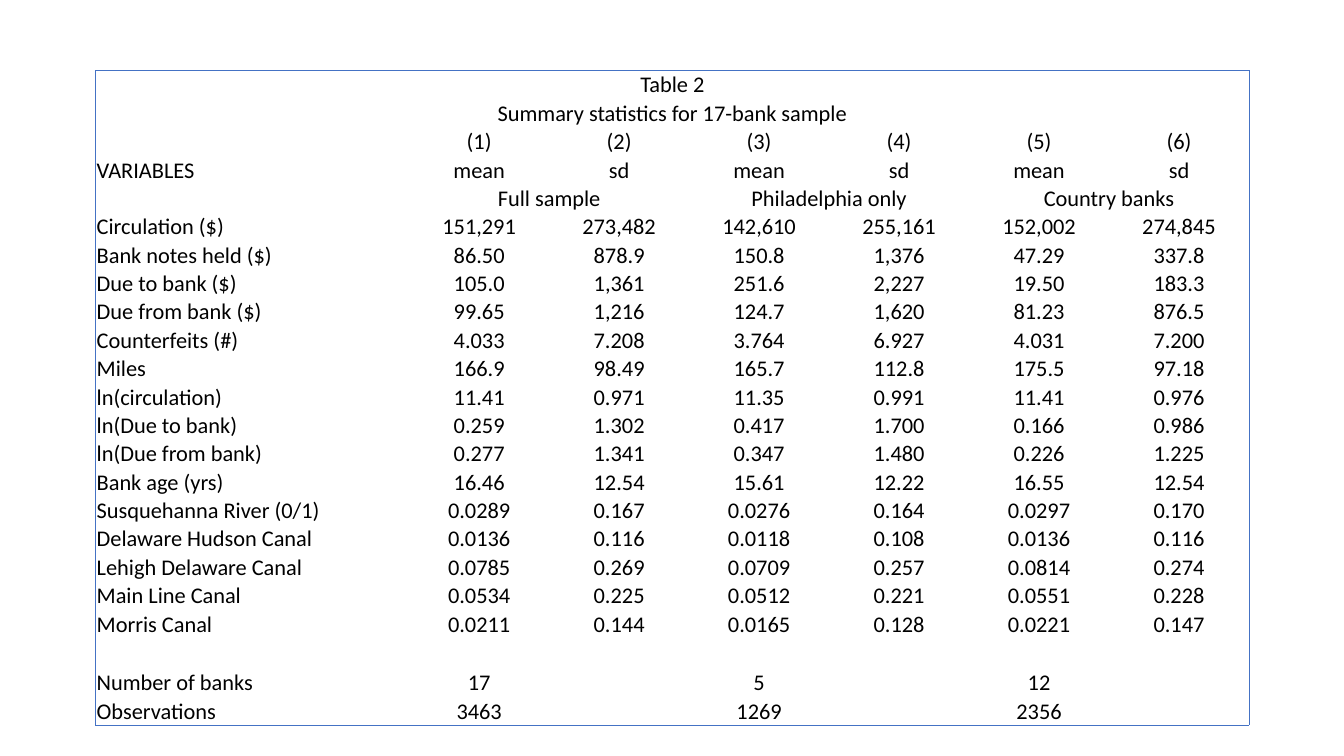
from lxml import etree
from pptx import Presentation
from pptx.dml.color import RGBColor
from pptx.enum import text
from pptx.oxml import ns
from pptx.util import Pt

COLORS = {"ink": "000000", "edge": "4472C4"}
FONT, SIZE = "Calibri", 16
LEFT, TOP = 68.4, 50.4
WIDTHS = [223.9] + [100] * 6
HEIGHTS = [19.5] * 20 + [21.6, 19.5, 15.8]
NO_GRID = "{2D5ABB26-0587-4C30-8999-92F81FD0307C}"

# Short rows are filled up with empty cells
ROWS = [
    ["Table 2"],
    ["Summary statistics for 17-bank sample"],
    ["", "(1)", "(2)", "(3)", "(4)", "(5)", "(6)"],
    ["VARIABLES"] + ["mean", "sd"] * 3,
    ["", "Full sample", "", "Philadelphia only", "", "Country banks"],
    ["Circulation ($)", "151,291", "273,482", "142,610", "255,161", "152,002", "274,845"],
    ["Bank notes held ($)", "86.50", "878.9", "150.8", "1,376", "47.29", "337.8"],
    ["Due to bank ($)", "105.0", "1,361", "251.6", "2,227", "19.50", "183.3"],
    ["Due from bank ($)", "99.65", "1,216", "124.7", "1,620", "81.23", "876.5"],
    ["Counterfeits (#)", "4.033", "7.208", "3.764", "6.927", "4.031", "7.200"],
    ["Miles", "166.9", "98.49", "165.7", "112.8", "175.5", "97.18"],
    ["ln(circulation)", "11.41", "0.971", "11.35", "0.991", "11.41", "0.976"],
    ["ln(Due to bank)", "0.259", "1.302", "0.417", "1.700", "0.166", "0.986"],
    ["ln(Due from bank)", "0.277", "1.341", "0.347", "1.480", "0.226", "1.225"],
    ["Bank age (yrs)", "16.46", "12.54", "15.61", "12.22", "16.55", "12.54"],
    ["Susquehanna River (0/1)", "0.0289", "0.167", "0.0276", "0.164", "0.0297", "0.170"],
    ["Delaware Hudson Canal", "0.0136", "0.116", "0.0118", "0.108", "0.0136", "0.116"],
    ["Lehigh Delaware Canal", "0.0785", "0.269", "0.0709", "0.257", "0.0814", "0.274"],
    ["Main Line Canal", "0.0534", "0.225", "0.0512", "0.221", "0.0551", "0.228"],
    ["Morris Canal", "0.0211", "0.144", "0.0165", "0.128", "0.0221", "0.147"],
    [],
    ["Number of banks", "17", "", "5", "", "12"],
    ["Observations", "3463", "", "1269", "", "2356"],
]
# Row, first column, last column
SPANS = [(0, 0, 6), (1, 0, 6), (4, 1, 2), (4, 3, 4), (4, 5, 6)]


def add_edge(cell, side):
    """Draw one thin border; side is L, R, T or B."""
    line = etree.SubElement(cell._tc.get_or_add_tcPr(), ns.qn("a:ln" + side), w=str(Pt(0.5)))
    fill = etree.SubElement(line, ns.qn("a:solidFill"))
    etree.SubElement(fill, ns.qn("a:srgbClr"), val=COLORS["edge"])


def set_text(cell, words, align):
    cell.margin_left = cell.margin_right = cell.margin_top = Pt(0.7)
    cell.margin_bottom = 0
    cell.vertical_anchor = text.MSO_ANCHOR.BOTTOM
    para = cell.text_frame.paragraphs[0]
    para.alignment = align
    if not words:
        # An empty cell keeps the row height of the body size
        para._p.get_or_add_endParaRPr().set("sz", str(SIZE * 100))
        return
    para.text = words
    font = para.runs[0].font
    font.name, font.size = FONT, Pt(SIZE)
    font.color.rgb = RGBColor.from_string(COLORS["ink"])


def add_grid(slide):
    last_row, last_col = len(ROWS) - 1, len(WIDTHS) - 1
    frame = slide.shapes.add_table(
        len(ROWS), len(WIDTHS), Pt(LEFT), Pt(TOP), Pt(sum(WIDTHS)), Pt(sum(HEIGHTS)))
    table = frame.table
    table.first_row = table.horz_banding = False
    table._tbl.tblPr.find(ns.qn("a:tableStyleId")).text = NO_GRID
    for col, width in zip(table.columns, WIDTHS):
        col.width = Pt(width)
    for row, height in zip(table.rows, HEIGHTS):
        row.height = Pt(height)
    for row, first, last in SPANS:
        table.cell(row, first).merge(table.cell(row, last))

    for r, row in enumerate(ROWS):
        for c in range(len(WIDTHS)):
            cell = table.cell(r, c)
            end = c + (cell.span_width if cell.is_merge_origin else 1) - 1
            # Outer frame only
            sides = {"L": c == 0, "R": end == last_col, "T": r == 0, "B": r == last_row}
            for side, shown in sides.items():
                if shown:
                    add_edge(cell, side)
            cell.fill.background()
            left = c == 0 and r > 1
            align = text.PP_ALIGN.LEFT if left else text.PP_ALIGN.CENTER
            set_text(cell, row[c] if c < len(row) else "", align)


def main():
    deck = Presentation()
    deck.slide_width, deck.slide_height = Pt(960), Pt(540)
    slide = deck.slides.add_slide(deck.slide_layouts[6])
    add_grid(slide)
    deck.save("out.pptx")


if __name__ == "__main__":
    main()
